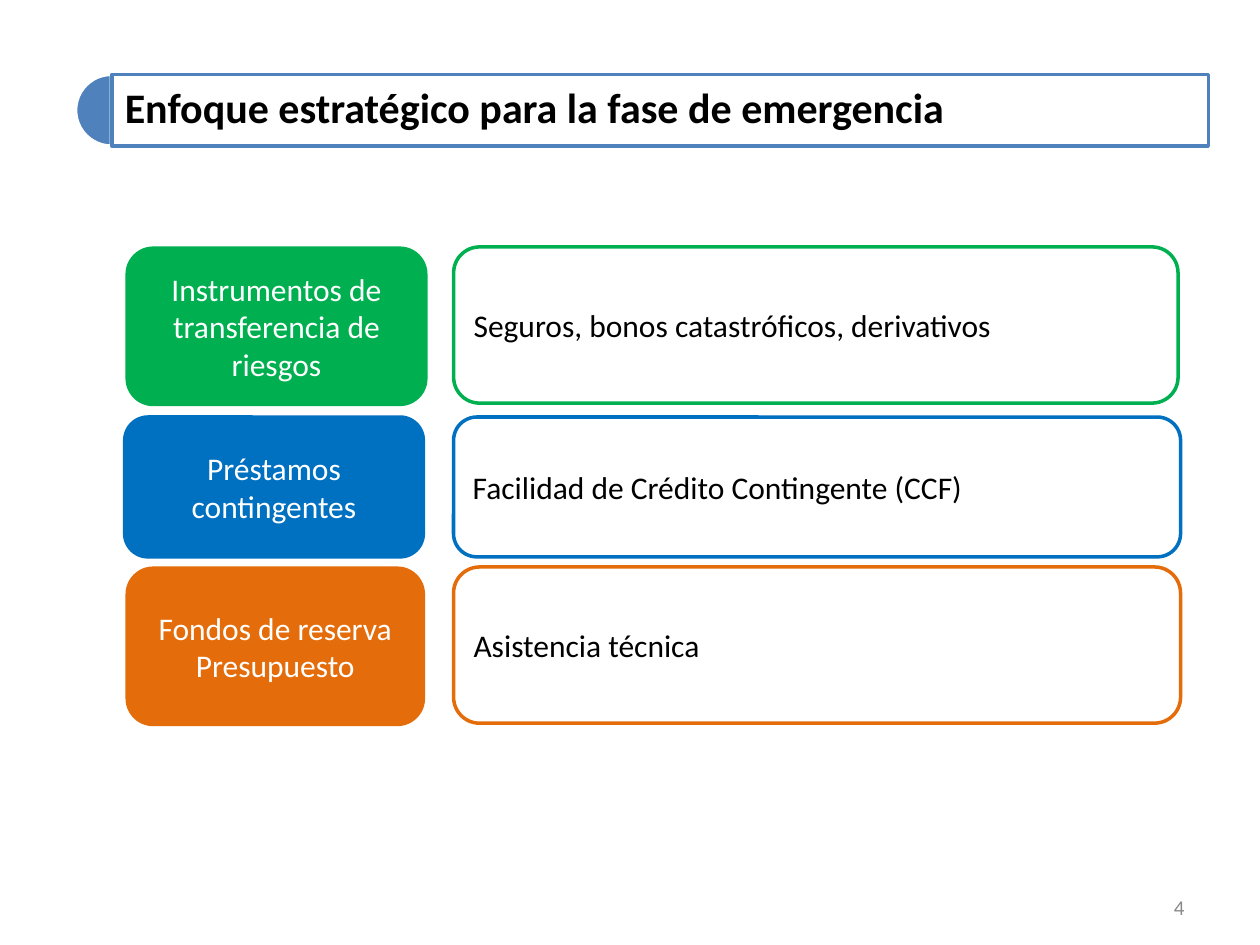
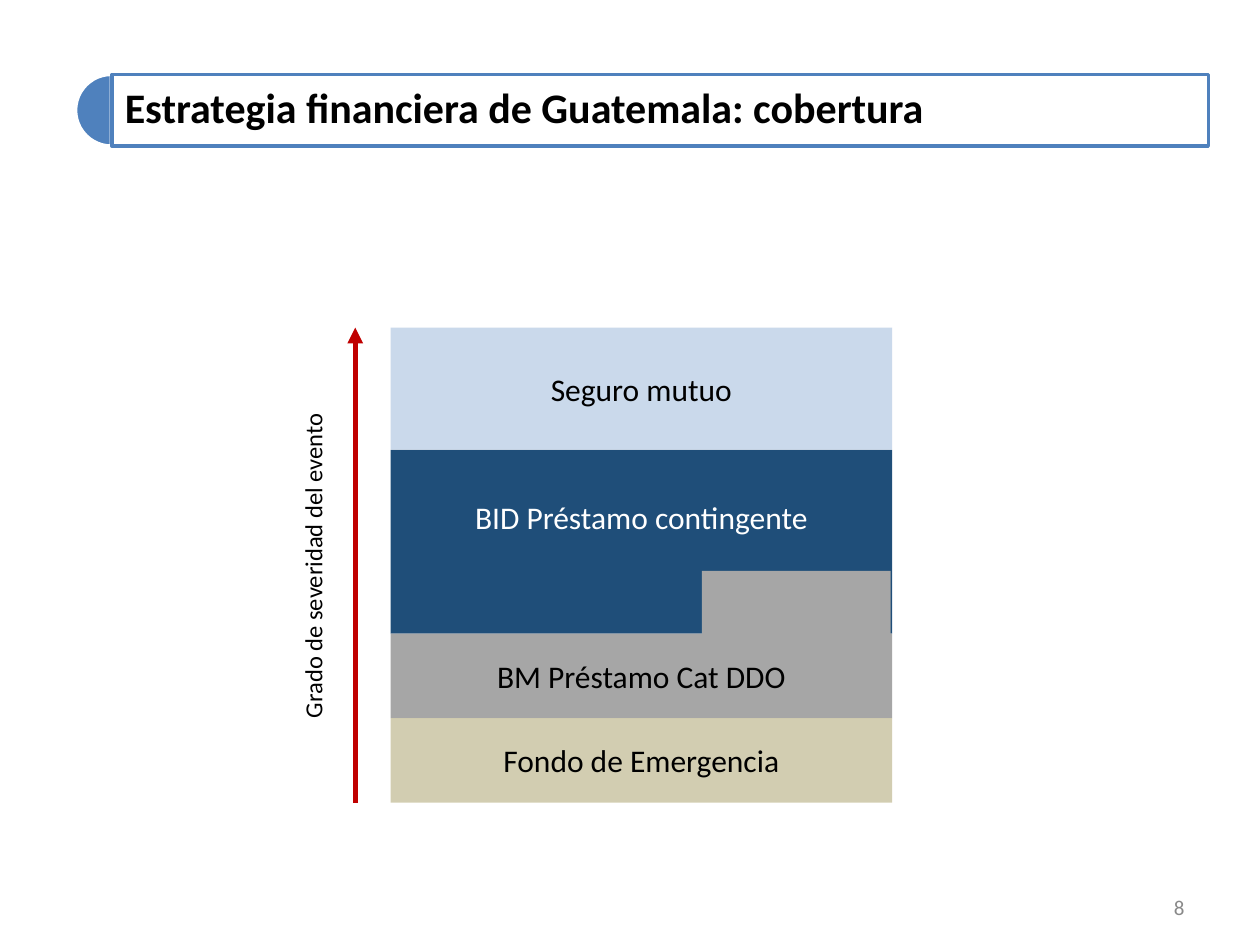
from dataclasses import dataclass

from lxml.etree import SubElement
from pptx import Presentation
from pptx.dml.color import RGBColor
from pptx.enum.shapes import MSO_CONNECTOR, MSO_SHAPE
from pptx.enum.text import MSO_ANCHOR, MSO_AUTO_SIZE, PP_ALIGN
from pptx.oxml.ns import qn
from pptx.util import Inches, Pt

FONT = "Calibri"
WHITE = RGBColor(0xFF, 0xFF, 0xFF)
BLACK = RGBColor(0x00, 0x00, 0x00)
TITLE_BLUE = RGBColor(0x4F, 0x81, 0xBD)
PAGE_GRAY = RGBColor(0x89, 0x89, 0x89)
GREEN = RGBColor(0x00, 0xB0, 0x50)
BLUE = RGBColor(0x00, 0x70, 0xC0)
ORANGE = RGBColor(0xE4, 0x6C, 0x0A)
ARROW_RED = RGBColor(0xC0, 0x00, 0x00)
PALE_BLUE = RGBColor(0xB9, 0xCD, 0xE5)
NAVY = RGBColor(0x1F, 0x4E, 0x79)
GRAY = RGBColor(0xA6, 0xA6, 0xA6)
TAN = RGBColor(0xC4, 0xBD, 0x97)


@dataclass(frozen=True)
class Box:
    left: float
    top: float
    width: float
    height: float

    def lengths(self) -> tuple:
        return tuple(map(Inches, (self.left, self.top, self.width, self.height)))


@dataclass(frozen=True)
class Instrument:
    label: str
    detail: str
    color: RGBColor
    label_box: Box
    detail_box: Box


@dataclass(frozen=True)
class Layer:
    text: str
    height: float
    color: RGBColor
    text_color: RGBColor = BLACK
    opacity: int = 100
    bottom_inset: float = 0.05


TITLE_BOX = Box(0.89, 0.59, 8.7, 0.57)
PAGE_BOX = Box(7.17, 6.95, 2.33, 0.4)

INSTRUMENTS = [
    Instrument("Instrumentos de transferencia de riesgos",
               "Seguros, bonos catastróficos, derivativos", GREEN,
               Box(1.01, 1.97, 2.37, 1.24), Box(3.6, 1.96, 5.75, 1.24)),
    Instrument("Préstamos contingentes",
               "Facilidad de Crédito Contingente (CCF)", BLUE,
               Box(0.99, 3.31, 2.37, 1.11), Box(3.6, 3.31, 5.77, 1.11)),
    Instrument("Fondos de reserva\nPresupuesto",
               "Asistencia técnica", ORANGE,
               Box(1.01, 4.51, 2.35, 1.24), Box(3.6, 4.5, 5.77, 1.24)),
]

# Coverage layers, from the most to the least severe event
LAYERS = [
    Layer("Seguro mutuo", 0.97, PALE_BLUE, opacity=75),
    Layer("BID Préstamo contingente", 1.46, NAVY, WHITE, bottom_inset=0.44),
    Layer("BM Préstamo Cat DDO", 0.67, GRAY),
    Layer("Fondo de Emergencia", 0.67, TAN, opacity=75),
]
STACK_LEFT, STACK_TOP, STACK_WIDTH = 3.1, 2.6, 3.98
STACK_BOTTOM = STACK_TOP + sum(layer.height for layer in LAYERS)


def write_text(shape, text: str, *, size=18, color=BLACK, bold=False,
               align=PP_ALIGN.LEFT, anchor=MSO_ANCHOR.MIDDLE,
               line_spacing=1.0) -> None:
    frame = shape.text_frame
    frame.text = text
    frame.word_wrap = True
    frame.auto_size = MSO_AUTO_SIZE.NONE
    frame.vertical_anchor = anchor
    for paragraph in frame.paragraphs:
        paragraph.alignment = align
        paragraph.line_spacing = line_spacing
        paragraph.font.name = FONT
        paragraph.font.size = Pt(size)
        paragraph.font.bold = bold
        paragraph.font.color.rgb = color


def set_line(shape, color: RGBColor, width: float = 2) -> None:
    shape.line.color.rgb = color
    shape.line.width = Pt(width)


def add_shape(slide, kind, box: Box, fill: RGBColor, line=None, opacity=100):
    shape = slide.shapes.add_shape(kind, *box.lengths())
    shape.shadow.inherit = False
    shape.fill.solid()
    shape.fill.fore_color.rgb = fill
    if opacity < 100:
        color = shape.element.find(".//" + qn("a:srgbClr"))
        SubElement(color, qn("a:alpha"), val=str(opacity * 1000))
    if line is None:
        shape.line.fill.background()
    else:
        set_line(shape, line)
    return shape


def add_text_box(slide, box: Box, text: str, **text_format):
    text_box = slide.shapes.add_textbox(*box.lengths())
    write_text(text_box, text, **text_format)
    return text_box


def add_titled_slide(deck, title_text: str, page: int):
    slide = deck.slides.add_slide(deck.slide_layouts.get_by_name("Title Only"))

    # Half disc and framed title
    half_disc = add_shape(slide, MSO_SHAPE.PIE, Box(0.6, 0.59, 0.57, 0.57),
                          TITLE_BLUE, WHITE)
    half_disc.adjustments[0], half_disc.adjustments[1] = 54, 162
    title = slide.shapes.title
    half_disc.element.addnext(title.element)
    title.left, title.top, title.width, title.height = TITLE_BOX.lengths()
    title.fill.solid()
    title.fill.fore_color.rgb = WHITE
    set_line(title, TITLE_BLUE)
    write_text(title, title_text, size=24, bold=True, line_spacing=0.9)

    # Page number
    add_text_box(slide, PAGE_BOX, str(page), size=12, color=PAGE_GRAY,
                 align=PP_ALIGN.RIGHT, anchor=MSO_ANCHOR.BOTTOM)
    return slide


def add_severity_arrow(slide, x: float, bottom: float, top: float) -> None:
    arrow = slide.shapes.add_connector(
        MSO_CONNECTOR.STRAIGHT, Inches(x), Inches(bottom), Inches(x), Inches(top))
    set_line(arrow, ARROW_RED, 3)
    SubElement(arrow.line._get_or_add_ln(), qn("a:tailEnd"), type="triangle")
    SubElement(arrow.element.spPr, qn("a:effectLst"))


def build_emergency_slide(deck) -> None:
    slide = add_titled_slide(deck, "Enfoque estratégico para la fase de emergencia", 4)
    for item in INSTRUMENTS:
        label = add_shape(slide, MSO_SHAPE.ROUNDED_RECTANGLE, item.label_box,
                          item.color, item.color)
        write_text(label, item.label, color=WHITE, align=PP_ALIGN.CENTER)
        detail = add_shape(slide, MSO_SHAPE.ROUNDED_RECTANGLE, item.detail_box,
                           WHITE, item.color)
        write_text(detail, item.detail)


def build_coverage_slide(deck) -> None:
    slide = add_titled_slide(deck, "Estrategia financiera de Guatemala: cobertura", 8)

    # Severity axis
    add_severity_arrow(slide, 2.82, STACK_BOTTOM, STACK_TOP)
    severity = add_text_box(slide, Box(1.24, 4.24, 2.65, 0.5),
                            "Grado de severidad del evento", size=14,
                            align=PP_ALIGN.CENTER, anchor=MSO_ANCHOR.TOP)
    severity.rotation = 270

    # Stacked layers
    top = STACK_TOP
    for layer in LAYERS:
        band = add_shape(slide, MSO_SHAPE.RECTANGLE,
                         Box(STACK_LEFT, top, STACK_WIDTH, layer.height),
                         layer.color, opacity=layer.opacity)
        write_text(band, layer.text, color=layer.text_color, align=PP_ALIGN.CENTER)
        band.text_frame.margin_bottom = Inches(layer.bottom_inset)
        top += layer.height

    # Step of the gray layer into the navy one
    add_shape(slide, MSO_SHAPE.RECTANGLE, Box(5.57, 4.53, 1.5, 0.51), GRAY)


def main() -> None:
    deck = Presentation()
    deck.slide_width, deck.slide_height = Inches(10), Inches(7.5)
    build_emergency_slide(deck)
    build_coverage_slide(deck)
    deck.save("out.pptx")


if __name__ == "__main__":
    main()
